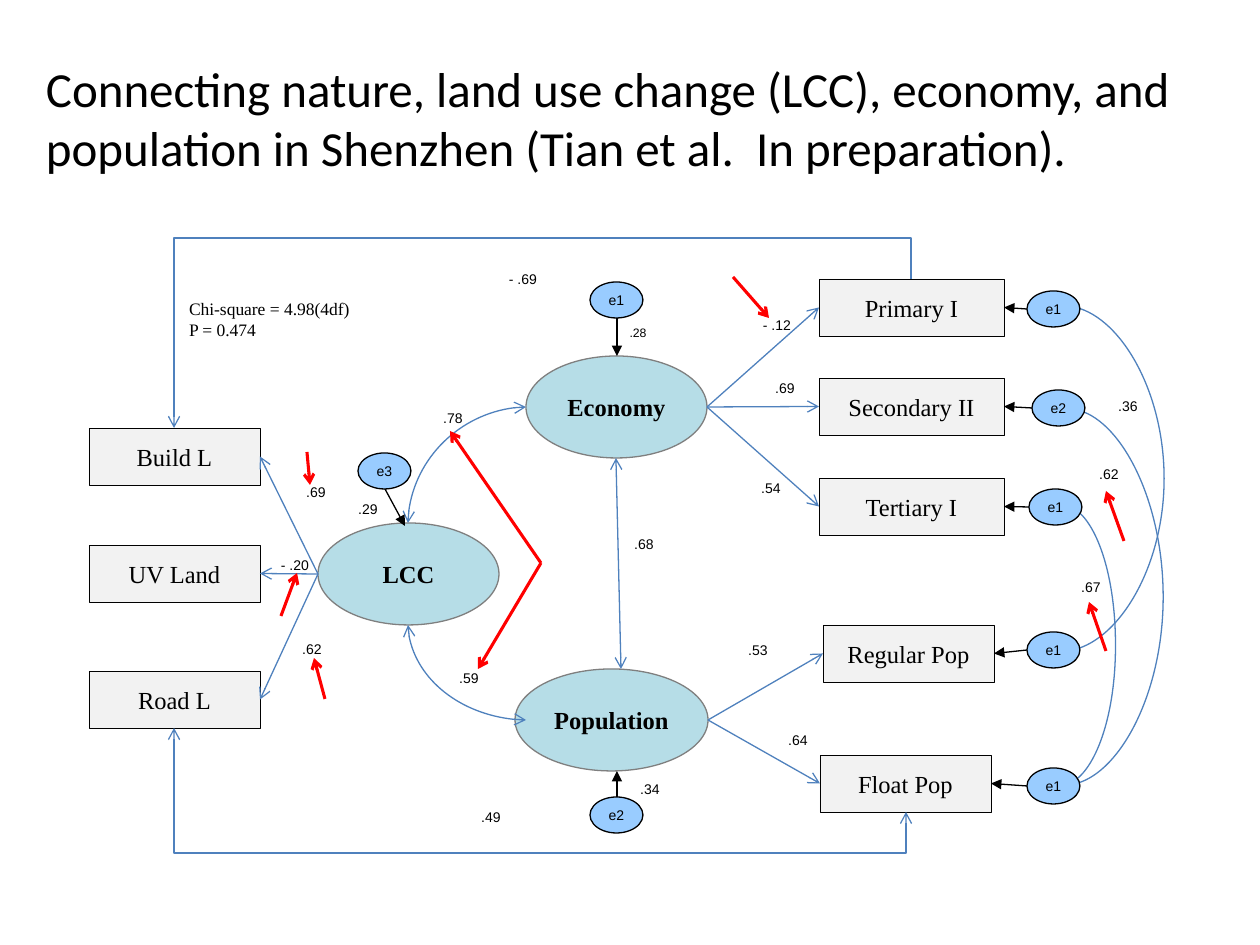
from pptx import Presentation
from pptx.dml.color import RGBColor
from pptx.enum.shapes import MSO_CONNECTOR as LINK, MSO_SHAPE as SHAPE
from pptx.enum.text import MSO_ANCHOR as ANCHOR, MSO_AUTO_SIZE as FIT, PP_ALIGN as ALIGN
from pptx.oxml.ns import qn
from pptx.util import Emu, Pt
from lxml.etree import SubElement

PX_PER_INCH = 126
TOP, LEFT, BOTTOM, RIGHT = range(4)
BLACK, RED, BLUE = "000000", "FF0000", "4F81BD"
SERIF, SANS = "Times New Roman", "Arial"


def emu(px):
    return Emu(round(px * 914400 / PX_PER_INCH))


def color(hex_text):
    return RGBColor.from_string(hex_text)


def write(frame, text, size=14, font=SERIF, bold=False, align=ALIGN.CENTER,
          anchor=ANCHOR.MIDDLE, inset=(9, 5), wrap=True):
    """Fill a text frame, one paragraph for each line of text."""
    frame.word_wrap = wrap
    frame.vertical_anchor = anchor
    frame.margin_left = frame.margin_right = emu(inset[0])
    frame.margin_top = frame.margin_bottom = emu(inset[1])
    for index, line in enumerate(text.split("\n")):
        para = frame.add_paragraph() if index else frame.paragraphs[0]
        para.alignment = align
        span = para.add_run()
        span.text = line
        span.font.size, span.font.name, span.font.bold = Pt(size), font, bold
        span.font.color.rgb = color(BLACK)


class PathDiagram:
    def __init__(self, deck):
        self.page = deck.slides.add_slide(deck.slide_layouts[5])
        self.shapes = self.page.shapes

    def title(self, text, left, top, width, height):
        box = self.shapes.title
        box.left, box.top, box.width, box.height = map(emu, (left, top, width, height))
        write(box.text_frame, text, size=28, font="Calibri", align=ALIGN.LEFT,
              anchor=ANCHOR.TOP, inset=(13, 6))
        box.text_frame.auto_size = FIT.NONE

    def node(self, kind, text, frame, fill, line, weight=0.75, **style):
        box = self.shapes.add_shape(kind, *map(emu, frame))
        box.shadow.inherit = False
        box.fill.solid()
        box.fill.fore_color.rgb = color(fill)
        box.line.color.rgb = color(line)
        box.line.width = Pt(weight)
        write(box.text_frame, text, **style)
        return box

    def variable(self, text, left, top, width=171):
        return self.node(SHAPE.RECTANGLE, text, (left, top, width, 57),
                         "F2F2F2", BLACK, 0.25)

    def factor(self, text, left, top, width=181):
        return self.node(SHAPE.OVAL, text, (left, top, width, 102),
                         "B6DDE7", "7F7F7F", bold=True)

    def error(self, text, left, top):
        return self.node(SHAPE.OVAL, text, (left, top, 53, 36), "99CCFF", BLACK,
                         size=8, font=SANS, wrap=False)

    def text(self, text, left, top, width, height, **style):
        box = self.shapes.add_textbox(*map(emu, (left, top, width, height)))
        write(box.text_frame, text, **style)

    def coefficient(self, text, center_x, center_y, size=8):
        width, height = (48 if len(text) == 3 else 60), 42
        self.text(text, center_x - width / 2, center_y - height / 2, width, height,
                  size=size, font=SANS)

    def finish(self, link, line, weight, tip, both):
        """Style a connector and put its arrowheads on."""
        link.line.color.rgb = color(line)
        link.line.width = Pt(weight)
        stroke = link.line._get_or_add_ln()
        for end in ("a:headEnd", "a:tailEnd") if both else ("a:tailEnd",):
            SubElement(stroke, qn(end), type=tip)
        SubElement(link._element.spPr, qn("a:effectLst"))

    def arrow(self, start, end, target=None, side=RIGHT, line=BLUE, weight=0.75,
              tip="arrow", both=False):
        link = self.shapes.add_connector(LINK.STRAIGHT, *map(emu, (*start, *end)))
        if target is not None:
            link.end_connect(target, side)
        self.finish(link, line, weight, tip, both)

    def route(self, kind, start, end, bend=None, upright=False, both=True):
        """Draw a bent or curved connector; an upright one leaves vertically."""
        (x1, y1), (x2, y2) = start, end
        across, down = x2 - x1, y2 - y1
        run, rise = (-down, across) if upright else (across, down)
        mid_x, mid_y = (x1 + x2) / 2, (y1 + y2) / 2
        link = self.shapes.add_connector(
            kind, emu(mid_x - run / 2), emu(mid_y - rise / 2),
            emu(mid_x + run / 2), emu(mid_y + rise / 2))
        properties = link._element.spPr
        if upright:
            properties.find(qn("a:xfrm")).set("rot", str(270 * 60000))
        geometry = properties.find(qn("a:prstGeom"))
        if bend is None:
            geometry.set("prst", "curvedConnector2")
        else:
            ratio = (bend - y1) / down if upright else (bend - x1) / across
            guides = geometry.find(qn("a:avLst"))
            if guides is None:
                guides = SubElement(geometry, qn("a:avLst"))
            SubElement(guides, qn("a:gd"), name="adj1", fmla=f"val {round(ratio * 100000)}")
        self.finish(link, BLUE, 0.75, "arrow", both)


def main():
    deck = Presentation()
    deck.slide_width, deck.slide_height = emu(1260), emu(945)
    diagram = PathDiagram(deck)
    diagram.title("Connecting nature, land use change (LCC), economy, and population "
                  "in Shenzhen (Tian et al.  In preparation).", 33, 53, 1176, 131)

    # Observed variables and latent factors
    land = [diagram.variable(name, 89, top)
            for name, top in (("Build L", 428), ("UV Land", 545), ("Road L", 671))]
    industry = [diagram.variable(name, 819, top, 185)
                for name, top in (("Primary I", 279), ("Secondary II", 378),
                                  ("Tertiary I", 478))]
    people = [diagram.variable("Regular Pop", 823, 625),
              diagram.variable("Float Pop", 820, 755)]
    diagram.factor("Population", 515, 669, 193)
    diagram.factor("LCC", 318, 523)
    diagram.factor("Economy", 526, 356)

    # Loadings from each factor to its variables
    for start, boxes, side in (((318, 574), land, RIGHT), ((707, 407), industry, LEFT),
                               ((708, 720), people, LEFT)):
        for box in boxes:
            diagram.arrow(start, start, box, side)

    # Links between factors
    diagram.route(LINK.CURVE, (526, 407), (408, 523))
    diagram.route(LINK.CURVE, (408, 625), (526, 720), upright=True)
    diagram.arrow((616, 458), (621, 669), both=True)

    # Links around the outside
    diagram.route(LINK.ELBOW, (906, 812), (174, 728), bend=853, upright=True)
    diagram.route(LINK.ELBOW, (911, 279), (174, 428), bend=238, upright=True, both=False)
    for start, end, bend in (((1063, 651), (1065, 306), 1165),
                             ((1066, 785), (1069, 409), 1164),
                             ((1065, 784), (1067, 507), 1116)):
        diagram.route(LINK.CURVE, start, end, bend)

    # Error terms of the factors
    for name, left, top, start, end in (
            ("e1", 590, 282, (617, 318), (617, 356)),
            ("e3", 358, 453, (385, 489), (405, 526)),
            ("e2", 590, 797, (617, 797), (617, 771))):
        diagram.error(name, left, top)
        diagram.arrow(start, end, line=BLACK, tip="triangle")

    # Error terms of the variables
    for name, left, top, box in zip(("e1", "e2", "e1", "e1", "e1"),
                                    (1027, 1032, 1029, 1027, 1027),
                                    (291, 390, 489, 632, 768), industry + people):
        diagram.error(name, left, top)
        start = (left, top + 18)
        diagram.arrow(start, start, box, line=BLACK, tip="triangle")

    # Coefficients, by centre
    for text, x, y in (
            (".36", 1128, 406), (".62", 1109, 474), (".67", 1091, 587),
            ("- .69", 523, 279), (".49", 491, 817), (".68", 644, 544),
            (".78", 453, 418), (".59", 469, 678), (".29", 368, 509),
            (".34", 650, 789), (".69", 316, 492), (".62", 312, 649),
            ("- .20", 295, 565), ("- .12", 777, 325), (".69", 785, 388),
            (".54", 771, 488), (".53", 758, 650), (".64", 798, 740)):
        diagram.coefficient(text, x, y)
    diagram.coefficient(".28", 638, 333, size=7)
    diagram.text("Chi-square = 4.98(4df)\nP = 0.474", 189, 260, 209, 117,
                 size=10, align=ALIGN.LEFT, inset=(0, 0))

    # Red pointers
    for start, end in (((1124, 541), (1106, 491)), ((1106, 651), (1089, 602)),
                       ((541, 563), (450, 431)), ((541, 563), (478, 669)),
                       ((733, 277), (769, 318)), ((281, 616), (297, 573)),
                       ((307, 452), (310, 485)), ((325, 699), (314, 658))):
        diagram.arrow(start, end, line=RED, weight=1.75)

    deck.save("out.pptx")


if __name__ == "__main__":
    main()
